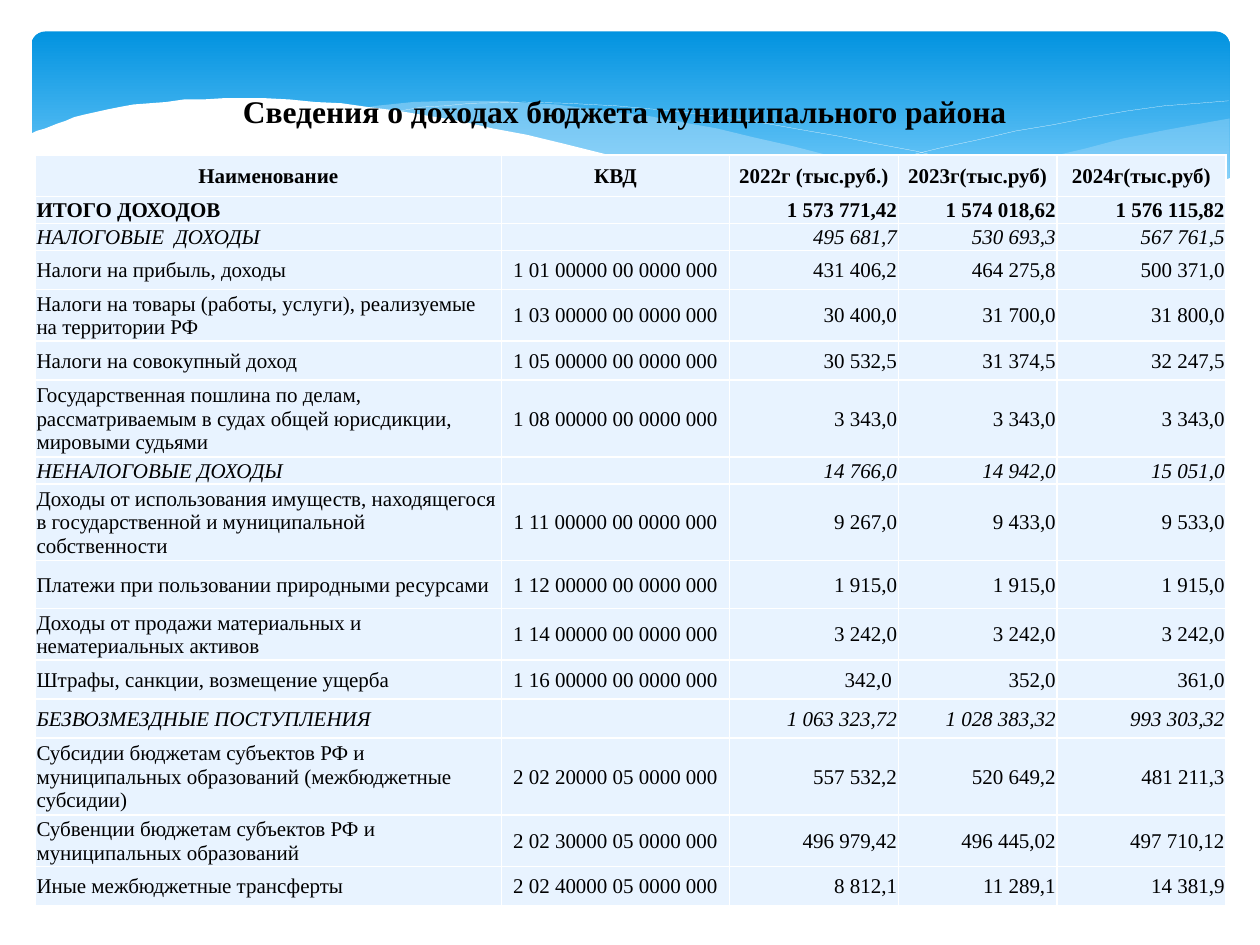
from dataclasses import dataclass

from lxml.etree import SubElement
from pptx import Presentation
from pptx.dml.color import RGBColor
from pptx.enum.shapes import MSO_SHAPE
from pptx.enum.text import MSO_ANCHOR, PP_ALIGN
from pptx.oxml.ns import qn
from pptx.util import Inches, Pt


@dataclass(frozen=True)
class Theme:
    font: str = "Times New Roman"
    title_size: int = 18
    table_size: int = 12
    ink: str = "000000"
    cell: str = "E8F3FF"
    white: str = "FFFFFF"
    banner_top: str = "0293E0"
    banner_bottom: str = "83D3FE"
    wave: str = "C6E7FC"


THEME = Theme()

RIGHT_WAVE = [
    (9.76, 0.94), (9.48, 0.99), (9.21, 1.04), (8.91, 1.1), (8.61, 1.18),
    (8.05, 1.31), (7.53, 1.43), (7.06, 1.52), (6.61, 1.6), (6.91, 1.64),
    (7.19, 1.67), (7.45, 1.69), (7.69, 1.71), (7.92, 1.72), (8.14, 1.72),
    (8.35, 1.72), (8.54, 1.7), (8.72, 1.69), (8.89, 1.66), (9.05, 1.63),
    (9.21, 1.6), (9.35, 1.56), (9.49, 1.52), (9.63, 1.47), (9.76, 1.41),
]
MIDDLE_WAVE = [
    (8.93, 1.67), (8.66, 1.64), (8.37, 1.59), (8.07, 1.54), (7.75, 1.49),
    (7.41, 1.42), (7.06, 1.34), (6.68, 1.26), (6.29, 1.16), (5.98, 1.09),
    (5.69, 1.02), (5.41, 0.97), (5.14, 0.92), (4.89, 0.89), (4.65, 0.86),
    (4.42, 0.83), (4.2, 0.82), (3.99, 0.8), (3.61, 0.8), (3.28, 0.81),
    (2.99, 0.84), (2.86, 0.86), (3.23, 0.9), (3.62, 0.97), (4.04, 1.06),
    (4.49, 1.16), (4.91, 1.26), (5.3, 1.35), (5.66, 1.43), (6.01, 1.5),
    (6.34, 1.56), (6.65, 1.61), (6.95, 1.65), (7.22, 1.68), (7.48, 1.7),
    (7.73, 1.72), (7.96, 1.73), (8.28, 1.73), (8.57, 1.71), (8.76, 1.69),
]
FALLING_CURVE = [
    (3.09, 0.9), (3.18, 0.88), (3.35, 0.85), (3.53, 0.84), (3.74, 0.82),
    (4.16, 0.81), (4.5, 0.82), (4.89, 0.84), (5.33, 0.88), (5.82, 0.94),
    (6.08, 0.98), (6.36, 1.03), (6.65, 1.08), (6.95, 1.14), (7.27, 1.2),
    (7.6, 1.28), (7.95, 1.36), (8.31, 1.45), (8.69, 1.55), (9.07, 1.66),
]
RISING_CURVE = [
    (6.13, 1.51), (6.53, 1.41), (6.95, 1.3), (7.48, 1.17), (7.76, 1.11),
    (8.06, 1.04), (8.36, 0.99), (8.66, 0.93), (8.95, 0.88), (9.24, 0.84),
    (9.51, 0.82), (9.75, 0.8),
]
WHITE_WAVE = [
    (9.77, 1.41), (9.59, 1.48), (9.4, 1.54), (9.2, 1.59), (8.99, 1.64),
    (8.75, 1.67), (8.5, 1.7), (8.23, 1.71), (7.93, 1.71), (7.61, 1.7),
    (7.26, 1.67), (6.88, 1.62), (6.48, 1.56), (6.03, 1.49), (5.55, 1.39),
    (5.29, 1.33), (5.03, 1.28), (4.75, 1.21), (4.47, 1.14), (4.18, 1.07),
    (3.91, 1.02), (3.65, 0.96), (3.4, 0.92), (3.16, 0.88), (2.92, 0.85),
    (2.71, 0.82), (2.5, 0.81), (2.3, 0.79), (2.11, 0.78), (1.93, 0.78),
    (1.77, 0.78), (1.61, 0.79), (1.46, 0.79), (1.32, 0.81), (1.19, 0.82),
    (1.06, 0.83), (0.95, 0.85), (0.85, 0.87), (0.76, 0.89), (0.67, 0.91),
    (0.59, 0.93), (0.52, 0.96), (0.46, 0.98), (0.36, 1.02), (0.29, 1.04),
    (0.23, 1.07), (0.23, 2.24), (9.77, 2.24),
]

COLUMN_WIDTHS = [3.7, 1.81, 1.34, 1.26, 1.34]
BOLD, ITALIC, PLAIN = {"bold": True}, {"italic": True}, {}
INCOME_ROWS = [
    (0.33, BOLD, "Наименование", "КВД", "2022г (тыс.руб.)", "2023г(тыс.руб)", "2024г(тыс.руб)"),
    (0.21, BOLD, "ИТОГО ДОХОДОВ", "", "1 573 771,42", "1 574 018,62", "1 576 115,82"),
    (0.21, ITALIC, "НАЛОГОВЫЕ  ДОХОДЫ", "", "495 681,7", "530 693,3", "567 761,5"),
    (0.31, PLAIN, "Налоги на прибыль, доходы",
     "1 01 00000 00 0000 000", "431 406,2", "464 275,8", "500 371,0"),
    (0.41, PLAIN, "Налоги на товары (работы, услуги), реализуемые на территории РФ",
     "1 03 00000 00 0000 000", "30 400,0", "31 700,0", "31 800,0"),
    (0.31, PLAIN, "Налоги на совокупный доход",
     "1 05 00000 00 0000 000", "30 532,5", "31 374,5", "32 247,5"),
    (0.61, PLAIN, "Государственная пошлина по делам, рассматриваемым в судах общей "
     "юрисдикции, мировыми судьями",
     "1 08 00000 00 0000 000", "3 343,0", "3 343,0", "3 343,0"),
    (0.21, ITALIC, "НЕНАЛОГОВЫЕ ДОХОДЫ", "", "14 766,0", "14 942,0", "15 051,0"),
    (0.61, PLAIN, "Доходы от использования имуществ, находящегося в государственной "
     "и муниципальной собственности",
     "1 11 00000 00 0000 000", "9 267,0", "9 433,0", "9 533,0"),
    (0.38, PLAIN, "Платежи при пользовании природными ресурсами",
     "1 12 00000 00 0000 000", "1 915,0", "1 915,0", "1 915,0"),
    (0.41, PLAIN, "Доходы от продажи материальных и нематериальных активов",
     "1 14 00000 00 0000 000", "3 242,0", "3 242,0", "3 242,0"),
    (0.31, PLAIN, "Штрафы, санкции, возмещение ущерба",
     "1 16 00000 00 0000 000", "342,0 ", "352,0", "361,0"),
    (0.31, ITALIC, "БЕЗВОЗМЕЗДНЫЕ ПОСТУПЛЕНИЯ", "", "1 063 323,72", "1 028 383,32", "993 303,32"),
    (0.61, PLAIN, "Субсидии бюджетам субъектов РФ и муниципальных образований "
     "(межбюджетные субсидии)",
     "2 02 20000 05 0000 000", "557 532,2", "520 649,2", "481 211,3"),
    (0.41, PLAIN, "Субвенции бюджетам субъектов РФ и муниципальных образований",
     "2 02 30000 05 0000 000", "496 979,42", "496 445,02", "497 710,12"),
    (0.31, PLAIN, "Иные межбюджетные трансферты",
     "2 02 40000 05 0000 000", "8 812,1", "11 289,1", "14 381,9"),
]


def rgb(color):
    return RGBColor.from_string(color)


def write_text(frame, text, size, align=PP_ALIGN.LEFT, bold=False, italic=False):
    paragraph = frame.paragraphs[0]
    paragraph.alignment = align
    if not text:
        SubElement(paragraph._p, qn("a:endParaRPr"), sz=str(size * 100))
        return
    run = paragraph.add_run()
    run.text = text
    run.font.name = THEME.font
    run.font.size = Pt(size)
    run.font.bold = bold
    run.font.italic = italic
    run.font.color.rgb = rgb(THEME.ink)


def add_banner(slide):
    banner = slide.shapes.add_shape(
        MSO_SHAPE.ROUNDED_RECTANGLE, Inches(0.25), Inches(0.25), Inches(9.51), Inches(1.56))
    banner.adjustments[0] = 0.07
    banner.shadow.inherit = False
    banner.line.fill.background()
    banner.fill.gradient()
    banner.fill.gradient_angle = 270
    top, bottom = banner.fill.gradient_stops
    top.color.rgb, top.position = rgb(THEME.banner_top), 0
    bottom.color.rgb, bottom.position = rgb(THEME.banner_bottom), 0.9


def add_curve(slide, points, fill=None, opacity=100):
    start, *rest = [(Inches(x), Inches(y)) for x, y in points]
    outline = slide.shapes.build_freeform(*start)
    outline.add_line_segments(rest, close=fill is not None)
    curve = outline.convert_to_shape()
    curve.shadow.inherit = False
    if fill is None:
        curve.fill.background()
        curve.line.color.rgb = rgb(THEME.white)
        curve.line.width = Pt(0.1)
        return
    curve.line.fill.background()
    curve.fill.solid()
    curve.fill.fore_color.rgb = rgb(fill)
    if opacity < 100:
        tint = curve._element.spPr.find(qn("a:solidFill"))[0]
        SubElement(tint, qn("a:alpha"), val=str(opacity * 1000))


def style_cell(cell):
    cell.margin_left = cell.margin_right = cell.margin_top = Inches(0.01)
    cell.margin_bottom = 0
    cell.vertical_anchor = MSO_ANCHOR.MIDDLE
    properties = cell._tc.get_or_add_tcPr()
    for side in ("lnL", "lnR", "lnT", "lnB"):
        border = SubElement(properties, qn(f"a:{side}"), w=str(Pt(1)))
        paint = SubElement(border, qn("a:solidFill"))
        SubElement(paint, qn("a:srgbClr"), val=THEME.white)
    cell.fill.solid()
    cell.fill.fore_color.rgb = rgb(THEME.cell)


def add_income_table(slide):
    height = sum(row[0] for row in INCOME_ROWS)
    table = slide.shapes.add_table(
        len(INCOME_ROWS), len(COLUMN_WIDTHS), Inches(0.28), Inches(1.23),
        Inches(sum(COLUMN_WIDTHS)), Inches(height)).table
    for column, width in zip(table.columns, COLUMN_WIDTHS):
        column.width = Inches(width)
    body_aligns = [PP_ALIGN.LEFT, PP_ALIGN.CENTER] + [PP_ALIGN.RIGHT] * 3
    for index, (row_height, emphasis, *texts) in enumerate(INCOME_ROWS):
        table.rows[index].height = Inches(row_height)
        aligns = body_aligns if index else [PP_ALIGN.CENTER] * len(texts)
        for cell, text, align in zip(table.rows[index].cells, texts, aligns):
            style_cell(cell)
            write_text(cell.text_frame, text, THEME.table_size, align=align, **emphasis)


def add_title(slide):
    title = slide.shapes.add_textbox(Inches(0.51), Inches(0.68), Inches(8.9), Inches(0.4))
    title.text_frame.word_wrap = True
    write_text(title.text_frame, "Сведения о доходах бюджета муниципального района",
               THEME.title_size, align=PP_ALIGN.CENTER, bold=True)


def main():
    presentation = Presentation()
    presentation.slide_width = Inches(10)
    presentation.slide_height = Inches(7.5)
    slide = presentation.slides.add_slide(presentation.slide_layouts[6])
    add_banner(slide)
    add_curve(slide, RIGHT_WAVE, fill=THEME.wave, opacity=29)
    add_curve(slide, MIDDLE_WAVE, fill=THEME.wave, opacity=40)
    add_curve(slide, FALLING_CURVE)
    add_curve(slide, RISING_CURVE)
    add_curve(slide, WHITE_WAVE, fill=THEME.white)
    add_income_table(slide)
    add_title(slide)
    presentation.save("out.pptx")


if __name__ == "__main__":
    main()
